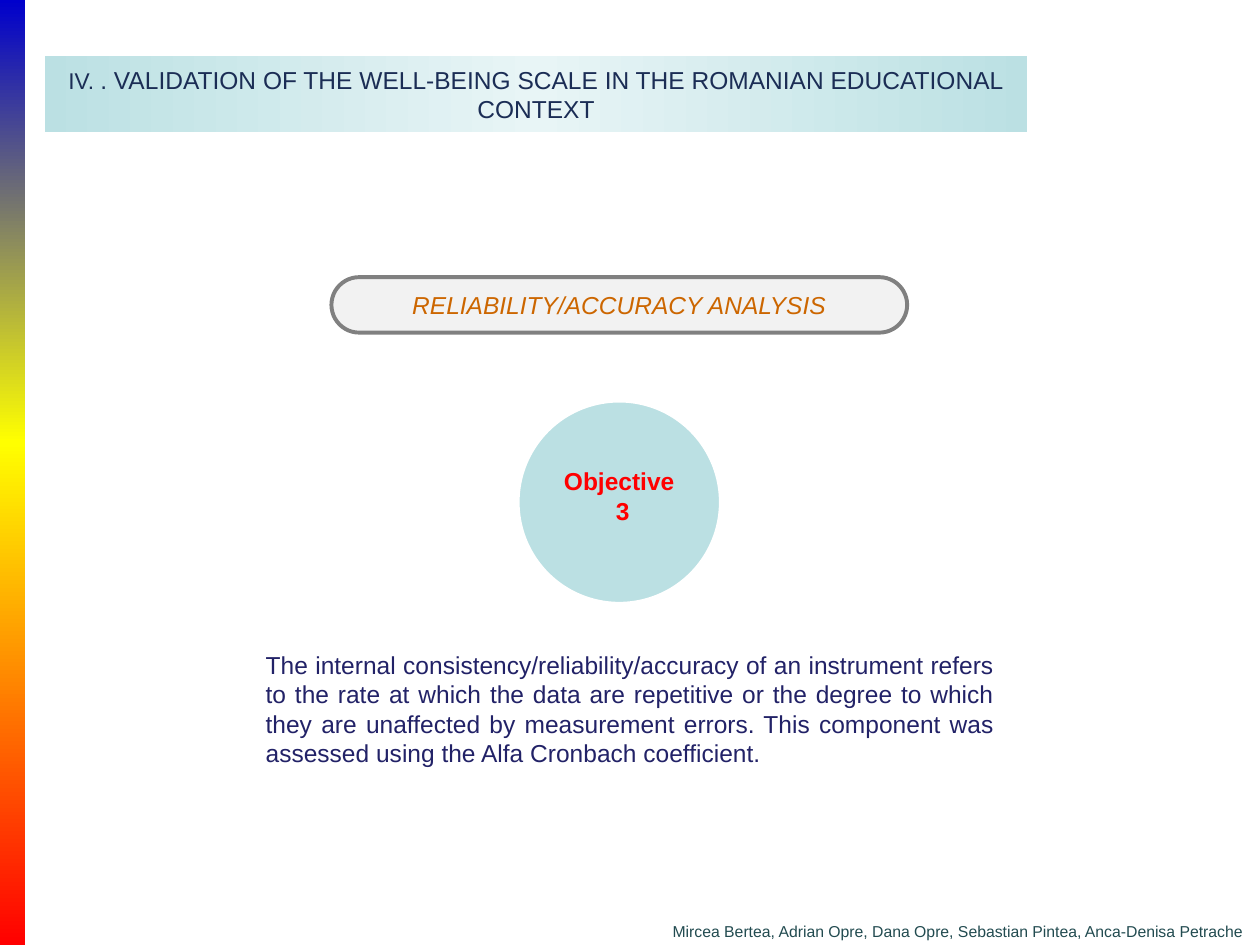
import copy

import pptx
import pptx.dml.color
import pptx.enum.shapes
import pptx.enum.text
import pptx.oxml.ns
import pptx.util

Pt = pptx.util.Pt
SHAPE = pptx.enum.shapes.MSO_SHAPE
ALIGN = pptx.enum.text.PP_ALIGN
ANCHOR = pptx.enum.text.MSO_ANCHOR
TEAL = "BBE0E3"


def rgb(value):
    return pptx.dml.color.RGBColor.from_string(value)


def place(shape, left, top, width, height):
    shape.left, shape.top, shape.width, shape.height = map(Pt, (left, top, width, height))


def fill_gradient(shape, colours, angle=0):
    """Spread the colours evenly along a linear gradient."""
    fill = shape.fill
    fill.gradient()
    fill.gradient_angle = angle
    stop_list = shape._element.spPr.find(".//" + pptx.oxml.ns.qn("a:gsLst"))
    for _ in colours[2:]:
        stop_list.append(copy.deepcopy(stop_list[-1]))
    for index, (stop, colour) in enumerate(zip(fill.gradient_stops, colours)):
        stop.position = index / (len(colours) - 1)
        stop.color.rgb = rgb(colour)


def write(shape, paragraphs, size=14, colour="000000", bold=False, italic=False,
          align=ALIGN.CENTER, anchor=ANCHOR.MIDDLE, top_inset=3.6):
    """Fill the shape with paragraphs, each a list of (text, size or None) runs or a string."""
    frame = shape.text_frame
    frame.word_wrap = True
    frame.auto_size = pptx.enum.text.MSO_AUTO_SIZE.NONE
    frame.vertical_anchor = anchor
    frame.margin_left = frame.margin_right = Pt(7.2)
    frame.margin_top, frame.margin_bottom = Pt(top_inset), Pt(3.6)
    for index, content in enumerate(paragraphs):
        paragraph = frame.add_paragraph() if index else frame.paragraphs[0]
        paragraph.alignment = align
        runs = [(content, size)] if isinstance(content, str) else content
        for text, run_size in runs:
            run = paragraph.add_run()
            run.text = text
            font = run.font
            font.name, font.size = "Arial", Pt(run_size or size)
            font.bold, font.italic = bold, italic
            font.color.rgb = rgb(colour)


def add_shape(slide, kind, box, fill=None, line=None, line_width=1):
    shape = slide.shapes.add_shape(kind, *map(Pt, box))
    shape.shadow.inherit = False
    if fill:
        shape.fill.solid()
        shape.fill.fore_color.rgb = rgb(fill)
    if line:
        shape.line.color.rgb = rgb(line)
        shape.line.width = Pt(line_width)
    else:
        shape.line.fill.background()
    return shape


def add_text(slide, box, text, **text_format):
    box_shape = slide.shapes.add_textbox(*map(Pt, box))
    write(box_shape, [text], anchor=ANCHOR.TOP, **text_format)


def add_side_strip(slide):
    split = 253
    for top, bottom, colours in ((0, split, ("0000CC", "FFFF00")),
                                 (split, 540, ("FFFF00", "FF0000"))):
        band = add_shape(slide, SHAPE.RECTANGLE, (0, top, 14.4, bottom - top))
        fill_gradient(band, colours, angle=270)


def add_title(slide):
    title = slide.shapes.title
    place(title, 25.5, 31.9, 561.6, 43.6)
    fill_gradient(title, (TEAL, "E8F5F6", TEAL))
    write(title, [[("IV. ", 13),
                   (". VALIDATION OF THE WELL-BEING SCALE IN THE ROMANIAN "
                    "EDUCATIONAL CONTEXT", 14)]], colour="1B2D55")


def main():
    deck = pptx.Presentation()
    deck.slide_width, deck.slide_height = Pt(720), Pt(540)
    slide = deck.slides.add_slide(deck.slide_layouts[5])

    add_side_strip(slide)
    add_title(slide)

    analysis = add_shape(slide, SHAPE.ROUNDED_RECTANGLE, (189.4, 158.4, 329, 31.7),
                         "F2F2F2", "808080", 2.25)
    analysis.adjustments[0] = 0.5
    write(analysis, ["RELIABILITY/ACCURACY ANALYSIS"], colour="CC6600", italic=True)

    add_text(slide, (144.7, 367.9, 430.6, 74.9),
             "The internal consistency/reliability/accuracy of an instrument refers to "
             "the rate at which the data are repetitive or the degree to which they are "
             "unaffected by measurement errors. This component was assessed using the "
             "Alfa Cronbach coefficient.", colour="222267", align=ALIGN.JUSTIFY)

    objective = add_shape(slide, SHAPE.OVAL, (295.9, 229, 115.9, 115.9), TEAL, "FFFFFF", 2)
    write(objective, ["Objective", " 3"], colour="FF0000", bold=True,
          anchor=ANCHOR.TOP, top_inset=20.5)

    add_text(slide, (377.3, 523.4, 342.7, 18),
             "Mircea Bertea, Adrian Opre, Dana Opre, Sebastian Pintea, Anca-Denisa Petrache",
             size=9, colour="224B50", align=ALIGN.LEFT)

    deck.save("out.pptx")


if __name__ == "__main__":
    main()
